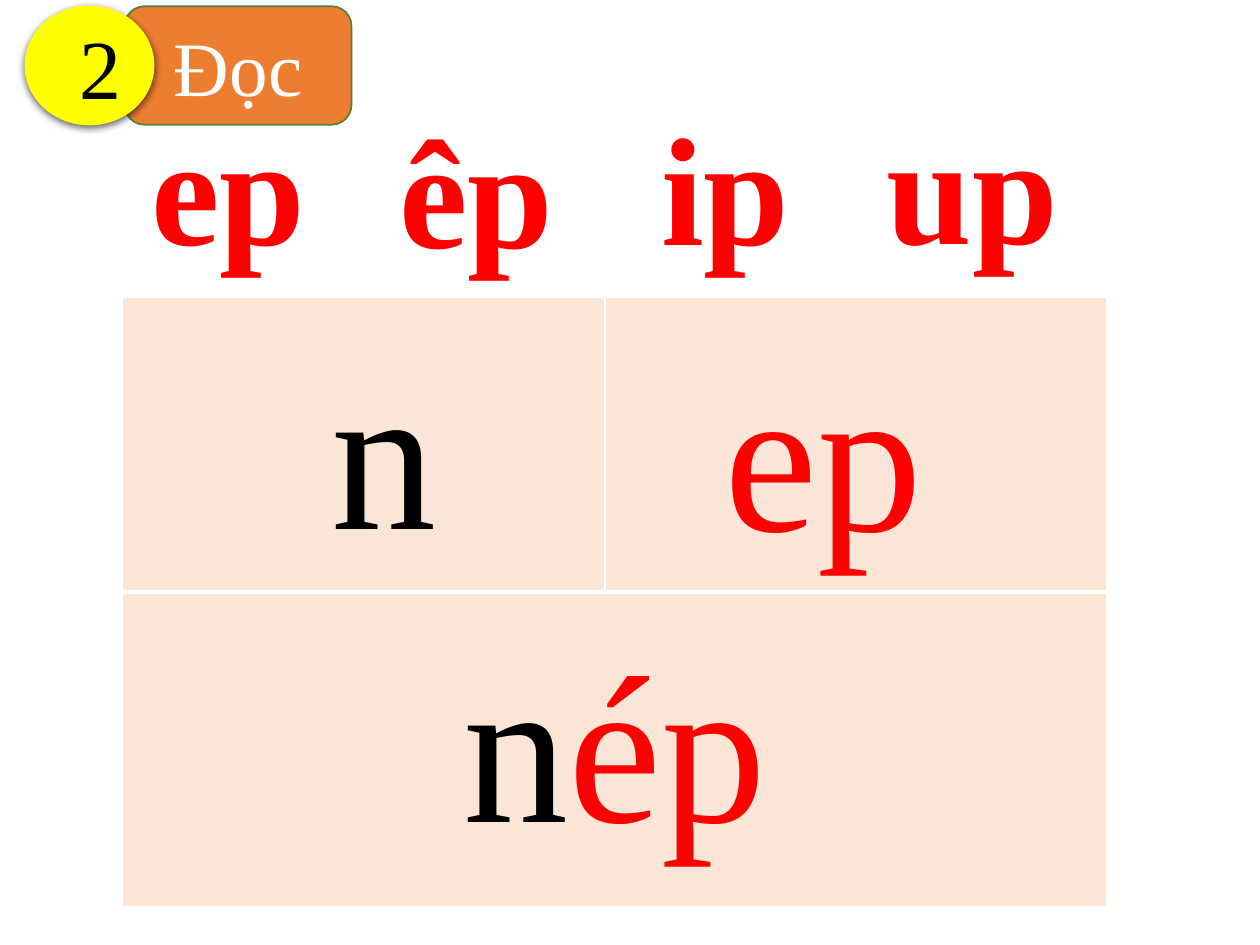
import pptx
import pptx.util
import pptx.dml.color
import pptx.enum.shapes
import pptx.enum.text
import pptx.oxml
from lxml import etree

COLS, ROWS = 100, 75
UNIT = pptx.util.Inches(10) / COLS
FONT = "Times New Roman"
HUES = {
    "red": "FF0000", "black": "000000", "white": "FFFFFF", "peach": "FBE5D6",
    "orange": "ED7D31", "green": "548235", "yellow": "FFFF00",
}
NS = "http://schemas.openxmlformats.org/drawingml/2006/main"
ALIGN = pptx.enum.text.PP_ALIGN
SHAPE = pptx.enum.shapes.MSO_SHAPE


def hue(name):
    """Return the named colour."""
    return pptx.dml.color.RGBColor.from_string(HUES[name])


def part(box, left, top, wide, high):
    """Return a box in grid units, offset from the corner of its parent."""
    return box[0] + left, box[1] + top, wide, high


def emu(box):
    """Turn grid units into slide lengths."""
    return [round(size * UNIT) for size in box]


def write(frame, runs, size, align, bold=False):
    """Fill a text frame with one paragraph of coloured runs."""
    frame.word_wrap = True
    line = frame.paragraphs[0]
    line.alignment = align
    for text, name in runs:
        run = line.add_run()
        run.text = text
        run.font.name = FONT
        run.font.size = pptx.util.Pt(size)
        run.font.bold = bold
        run.font.color.rgb = hue(name)


def label(slide, box, runs, size, align, bold=False):
    """Add a text box that grows with its text."""
    frame = slide.shapes.add_textbox(*emu(box)).text_frame
    write(frame, runs, size, align, bold)
    frame.auto_size = pptx.enum.text.MSO_AUTO_SIZE.SHAPE_TO_FIT_TEXT


def block(slide, kind, box, fill, edge, width, run, size):
    """Add a filled shape with centred text."""
    shape = slide.shapes.add_shape(kind, *emu(box))
    shape.shadow.inherit = False
    shape.fill.solid()
    shape.fill.fore_color.rgb = hue(fill)
    shape.line.color.rgb = hue(edge)
    shape.line.width = pptx.util.Pt(width)
    shape.text_frame.vertical_anchor = pptx.enum.text.MSO_ANCHOR.MIDDLE
    write(shape.text_frame, [run], size, ALIGN.CENTER)
    return shape


def shade(shape):
    """Give a shape a soft shadow below it."""
    effects = shape._element.spPr.find(f"{{{NS}}}effectLst")
    effects.append(pptx.oxml.parse_xml(
        f'<a:outerShdw xmlns:a="{NS}" blurRad="57150" dist="19050" '
        f'dir="5400000" algn="ctr" rotWithShape="0">'
        f'<a:srgbClr val="{HUES["black"]}"><a:alpha val="63000"/></a:srgbClr>'
        f'</a:outerShdw>'))


def badge(slide, box):
    """Place the numbered heading."""
    high = box[3]
    block(slide, SHAPE.ROUNDED_RECTANGLE, part(box, 7.9, 0, 18, high),
          "orange", "green", 1, ("Đọc", "white"), 44)
    disc = block(slide, SHAPE.OVAL, part(box, 0, 0, 10.2, high),
                 "yellow", "yellow", 0.75, ("2", "black"), 48)
    disc.text_frame.margin_left = pptx.util.Inches(0.17)
    disc.text_frame.margin_right = 0
    shade(disc)


def sounds(slide, box):
    """Place the row of rhymes."""
    for text, left, top, wide in (("ep", 0, 0, 20.5), ("êp", 19.7, 0.2, 27.7),
                                  ("ip", 40.5, 0, 15), ("up", 58.4, -0.1, 21.9)):
        label(slide, part(box, left, top, wide, box[3]), [(text, "red")],
              88, ALIGN.LEFT, True)


def rim(cell, widths):
    """Draw white borders on a cell, in points for each side."""
    props = cell._tc.get_or_add_tcPr()
    for spot, (side, width) in enumerate(widths.items()):
        line = etree.Element(f"{{{NS}}}ln{side}", w=str(pptx.util.Pt(width)))
        fill = etree.SubElement(line, f"{{{NS}}}solidFill")
        etree.SubElement(fill, f"{{{NS}}}srgbClr", val=HUES["white"])
        props.insert(spot, line)


def board(slide, box):
    """Place the spelling table with its letters."""
    table = slide.shapes.add_table(2, 2, *emu(box)).table
    for col, wide in zip(table.columns, (38.3, 39.8)):
        col.width = round(wide * UNIT)
    for row, high in zip(table.rows, (23.4, 25)):
        row.height = round(high * UNIT)
    table.cell(1, 0).merge(table.cell(1, 1))
    for row, (top, base) in enumerate(((1, 3), (3, 1))):
        for col in range(2):
            cell = table.cell(row, col)
            cell.fill.solid()
            cell.fill.fore_color.rgb = hue("peach")
            rim(cell, {"L": 1, "R": 1, "T": top, "B": base})
    head, tail = ("n", "black"), ("ep", "red")
    for runs, left, top, wide in (([head], 15.6, 1.3, 10.1),
                                  ([tail], 43.4, 1.4, 24.5),
                                  ([head, ("ép", "red")], 20.6, 24.5, 37)):
        label(slide, part(box, left, top, wide, 21.2), runs, 120, ALIGN.CENTER)


def main():
    """Build the slide and save it."""
    deck = pptx.Presentation()
    deck.slide_width = round(COLS * UNIT)
    deck.slide_height = round(ROWS * UNIT)
    slide = deck.slides.add_slide(deck.slide_layouts[6])
    sounds(slide, (11, 6.8, 80.3, 15.8))
    badge(slide, (2, 0.5, 25.9, 9.4))
    board(slide, (9.7, 23.6, 78.1, 48.4))
    deck.save("out.pptx")


if __name__ == "__main__":
    main()
